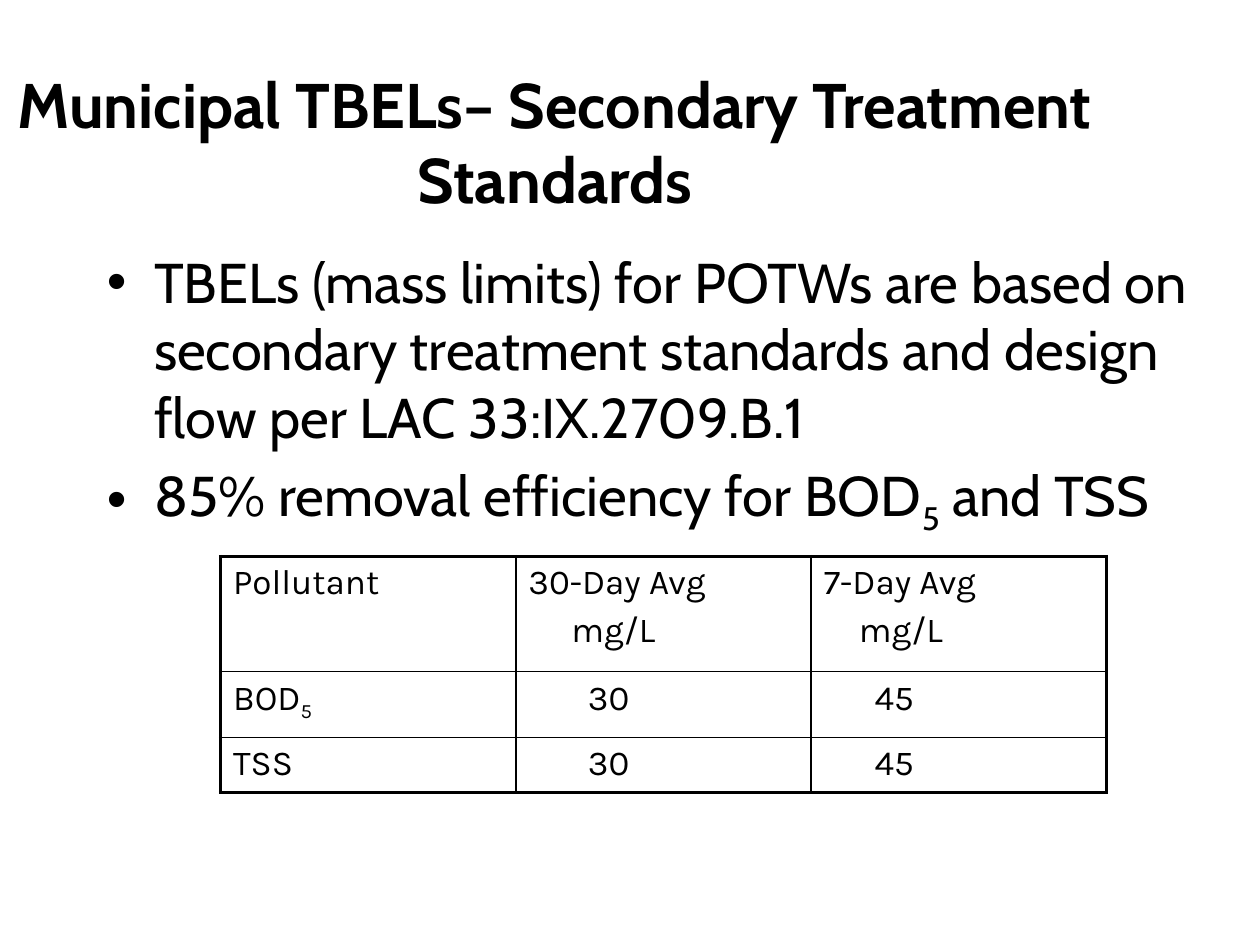
from lxml.etree import SubElement
from pptx import Presentation
from pptx.dml.color import RGBColor
from pptx.enum.text import MSO_ANCHOR, PP_ALIGN
from pptx.oxml.ns import qn
from pptx.util import Pt

BLACK = "000000"


def color(hex_value):
    return RGBColor.from_string(hex_value)


def write(paragraph, text, font, size, bold=False):
    """Fill a paragraph; every second part between bars is a subscript."""
    for index, part in enumerate(text.split("|")):
        if not part:
            continue
        span = paragraph.add_run()
        span.text = part
        span.font.name = font
        span.font.size = Pt(size)
        span.font.bold = bold
        span.font.color.rgb = color(BLACK)
        if index % 2:
            span.font._element.set("baseline", "-25000")


deck = Presentation()
deck.slide_width, deck.slide_height = Pt(720), Pt(540)
page = deck.slides.add_slide(deck.slide_layouts[6])

# Title
title = page.shapes.add_textbox(Pt(0), Pt(24), Pt(634), Pt(113)).text_frame
title.word_wrap = True
title.vertical_anchor = MSO_ANCHOR.MIDDLE
title.paragraphs[0].alignment = PP_ALIGN.CENTER
write(title.paragraphs[0], "Municipal TBELs– Secondary Treatment Standards",
      "Cabin", 36, True)

# Bullets
bullets = [
    "TBELs (mass limits) for POTWs are based on secondary treatment standards "
    "and design flow per LAC 33:IX.2709.B.1",
    "85% removal efficiency for BOD|5| and TSS",
]
body = page.shapes.add_textbox(Pt(54), Pt(138), Pt(645), Pt(156)).text_frame
body.word_wrap = True
for index, bullet in enumerate(bullets):
    paragraph = body.add_paragraph() if index else body.paragraphs[0]
    properties = paragraph._p.get_or_add_pPr()
    properties.set("marL", str(Pt(27)))
    properties.set("indent", str(-Pt(27)))
    SubElement(properties, qn("a:buFont")).set("typeface", "Arial")
    SubElement(properties, qn("a:buChar")).set("char", "•")
    if index:
        paragraph.space_before = Pt(6.4)
    write(paragraph, bullet, "Cabin", 32)

# Limits table: each cell lists its lines as (text, left indent)
rows = [
    [[("Pollutant", 0)],
     [("30-Day Avg", 0), ("mg/L", 24.5)],
     [("7-Day Avg", 0), ("mg/L", 20)]],
    [[("BOD|5", 0)], [("30", 34)], [("45", 29)]],
    [[("TSS", 0)], [("30", 34)], [("45", 29)]],
]
heights = [65.8, 37.7, 31]
table = page.shapes.add_table(3, 3, Pt(126), Pt(318), Pt(506.4),
                              Pt(sum(heights))).table
table.first_row = table.horz_banding = False
for column in table.columns:
    column.width = Pt(168.8)

for r, row in enumerate(rows):
    table.rows[r].height = Pt(heights[r])
    for c, lines in enumerate(row):
        cell = table.cell(r, c)
        for index, (text, indent) in enumerate(lines):
            frame = cell.text_frame
            paragraph = frame.add_paragraph() if index else frame.paragraphs[0]
            paragraph._p.get_or_add_pPr().set("marL", str(Pt(indent)))
            if index:
                paragraph.space_before = Pt(4)
            write(paragraph, text, "Karla", 20)

        # Thick outer frame, thin inner lines
        outer = {"L": c == 0, "R": c == 2, "T": r == 0, "B": r == 2}
        cell_properties = cell._tc.get_or_add_tcPr()
        for side, is_outer in outer.items():
            line = SubElement(cell_properties, qn("a:ln" + side))
            line.set("w", str(Pt(2.25 if is_outer else 1)))
            fill = SubElement(line, qn("a:solidFill"))
            SubElement(fill, qn("a:srgbClr")).set("val", BLACK)
        cell.fill.background()

deck.save("out.pptx")
